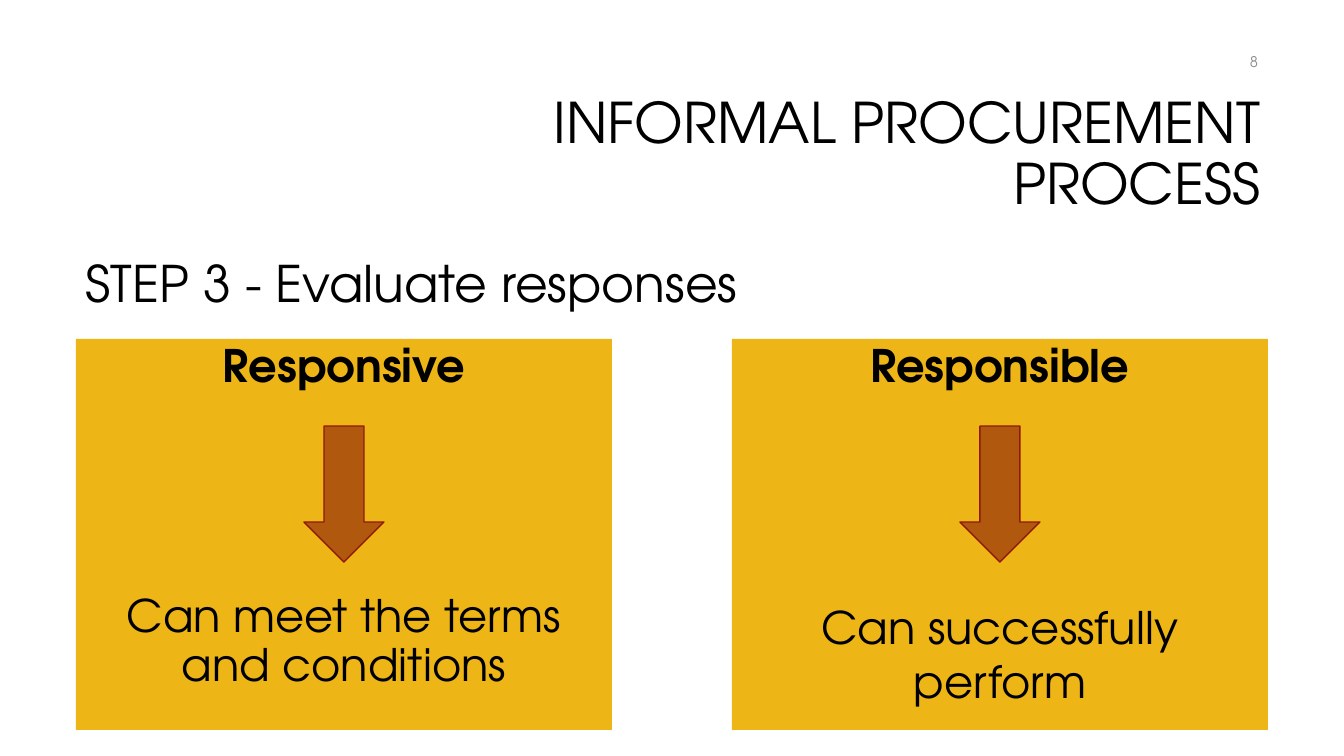
from pptx import Presentation
from pptx import util as u
from pptx.dml.color import RGBColor
from pptx.enum import shapes, text

BLACK = RGBColor(0x00, 0x00, 0x00)
GRAY = RGBColor(0x8C, 0x8C, 0x8C)
GOLD = RGBColor(0xEE, 0xB5, 0x16)
RUST = RGBColor(0xB0, 0x59, 0x0E)
DARK_RED = RGBColor(0x91, 0x19, 0x0A)

LEFT, CENTER, RIGHT = text.PP_ALIGN.LEFT, text.PP_ALIGN.CENTER, text.PP_ALIGN.RIGHT
TOP, MIDDLE = text.MSO_ANCHOR.TOP, text.MSO_ANCHOR.MIDDLE


def px(length):
    """Turn a length at 100.8 px to the inch into EMU."""
    return u.Emu(round(length * 914400 / 100.8))


class SlideBuilder:
    font_name = "TeX Gyre Adventor"

    def __init__(self, page):
        self.page = page

    def add_words(self, para, words, size, color=BLACK, bold=False, align=LEFT,
                  line_spacing=1.0):
        para.alignment = align
        para.line_spacing = line_spacing
        span = para.add_run()
        span.text = words
        span.font.name = self.font_name
        span.font.size = u.Pt(size)
        span.font.bold = bold
        span.font.color.rgb = color

    def label(self, area, words, size, anchor=TOP, **style):
        box = self.page.shapes.add_textbox(*map(px, area))
        box.text_frame.word_wrap = True
        box.text_frame.vertical_anchor = anchor
        self.add_words(box.text_frame.paragraphs[0], words, size, **style)

    def shape(self, kind, area, fill, line=None):
        shape = self.page.shapes.add_shape(kind, *map(px, area))
        shape.shadow.inherit = False
        shape.fill.solid()
        shape.fill.fore_color.rgb = fill
        if line is None:
            shape.line.fill.background()
        else:
            shape.line.color.rgb = line
            shape.line.width = u.Pt(1)
        return shape

    def panel(self, left, heading, meaning, gap, meaning_spacing):
        """Draw a heading, a down arrow and its meaning; gap is in points."""
        top, width, arrow_width = 339, 536, 80
        box = self.shape(shapes.MSO_SHAPE.RECTANGLE, (left, top, width, 391), GOLD)
        frame = box.text_frame
        frame.word_wrap = True
        frame.vertical_anchor = TOP
        self.add_words(frame.paragraphs[0], heading, 32, bold=True, align=CENTER,
                       line_spacing=0.9)
        para = frame.add_paragraph()
        para.space_before = u.Pt(gap)
        self.add_words(para, meaning, 32, align=CENTER, line_spacing=meaning_spacing)
        arrow_left = left + (width - arrow_width) // 2
        self.shape(shapes.MSO_SHAPE.DOWN_ARROW,
                   (arrow_left, top + 87, arrow_width, 136), RUST, DARK_RED)


def main():
    deck = Presentation()
    deck.slide_width, deck.slide_height = px(1344), px(756)
    slide = SlideBuilder(deck.slides.add_slide(deck.slide_layouts[6]))

    slide.label((320, 85, 950, 142), "INFORMAL PROCUREMENT PROCESS", 40,
                anchor=MIDDLE, align=RIGHT, line_spacing=0.9)
    slide.label((966, 42, 302, 40), "8", 10.5, anchor=MIDDLE, color=GRAY, align=RIGHT)
    slide.label((76, 247, 741, 72), "STEP 3 - Evaluate responses", 36)
    slide.panel(76, "Responsive", "Can meet the terms and conditions", 144, 0.9)
    slide.panel(732, "Responsible", "Can successfully perform", 148, 1.0)

    deck.save("out.pptx")


if __name__ == "__main__":
    main()
